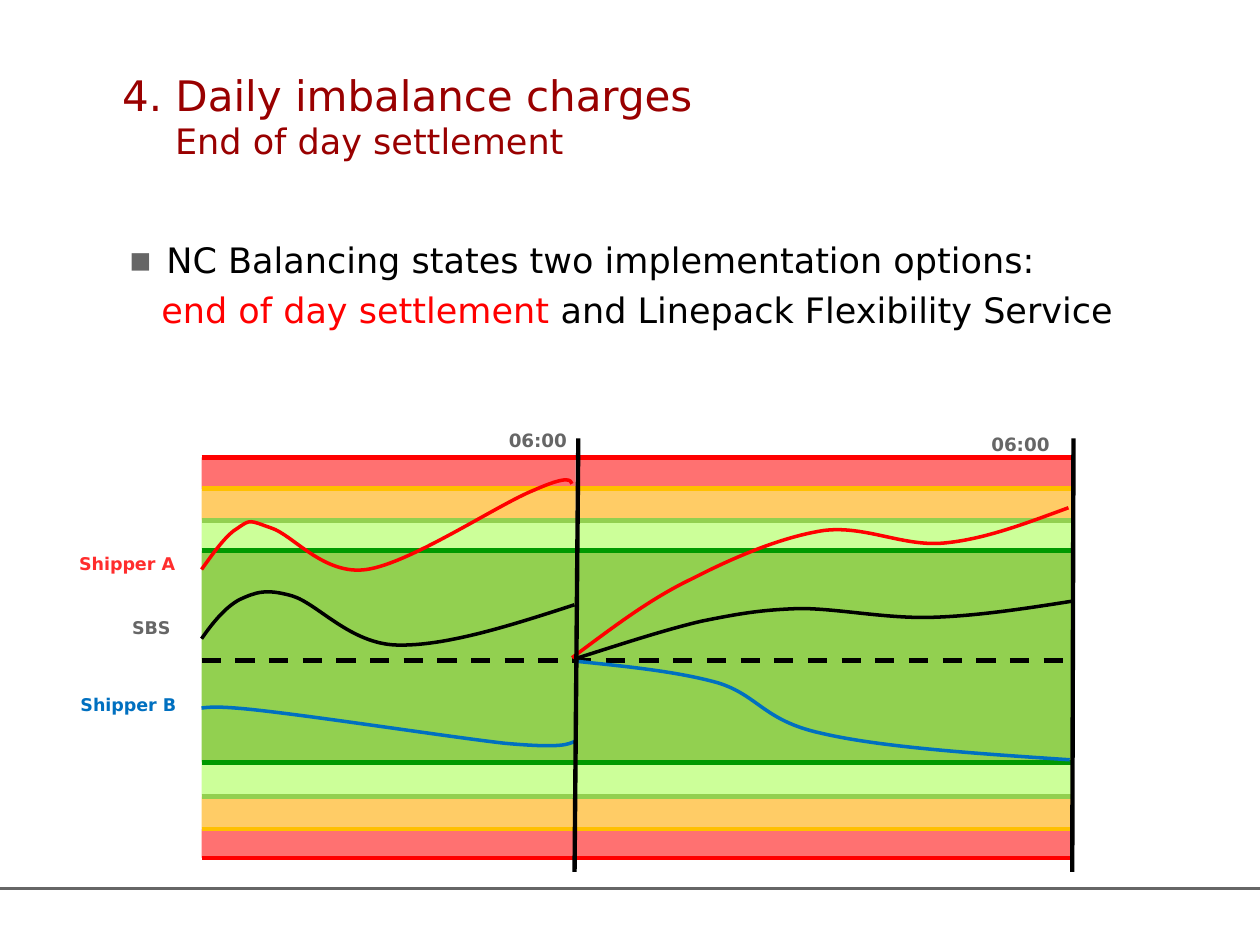
from dataclasses import dataclass
from itertools import pairwise

from lxml.etree import SubElement
from pptx import Presentation
from pptx.dml.color import RGBColor
from pptx.enum.dml import MSO_LINE
from pptx.enum.shapes import MSO_CONNECTOR, MSO_SHAPE
from pptx.enum.text import MSO_ANCHOR
from pptx.oxml.ns import qn
from pptx.util import Inches, Pt


@dataclass(frozen=True)
class Theme:
    font: str = "DejaVu Sans"
    heading: str = "990000"
    black: str = "000000"
    gray: str = "666666"
    red: str = "FF0000"
    blue: str = "0070C0"
    shipper_red: str = "FF2D2D"
    dark_green: str = "009900"
    green: str = "92D050"
    light_green: str = "CCFF99"
    amber: str = "FFC000"
    light_amber: str = "FFCC66"
    light_red: str = "FF7171"
    title_size: float = 24
    body_size: float = 20
    time_size: float = 10.5
    label_size: float = 10
    thin: float = 2
    axis: float = 2.5
    thick: float = 2.75


class SlideBuilder:
    columns = 100
    rows = 75

    def __init__(self, presentation, theme):
        self.theme = theme
        self.width = presentation.slide_width
        self.height = presentation.slide_height
        self.slide = presentation.slides.add_slide(presentation.slide_layouts[6])

    def x(self, columns):
        return round(self.width * columns / self.columns)

    def y(self, rows):
        return round(self.height * rows / self.rows)

    def point(self, position):
        return self.x(position[0]), self.y(position[1])

    def box(self, left, top, width, height):
        return self.x(left), self.y(top), self.x(width), self.y(height)

    def style_line(self, line, color, weight):
        line.color.rgb = RGBColor.from_string(color)
        line.width = Pt(weight)

    def text(self, area, paragraphs, margin=None, anchor=MSO_ANCHOR.TOP):
        text_frame = self.slide.shapes.add_textbox(*self.box(*area)).text_frame
        text_frame.word_wrap = True
        text_frame.vertical_anchor = anchor
        if margin is not None:
            text_frame.margin_left = text_frame.margin_right = margin
            text_frame.margin_top = text_frame.margin_bottom = margin
        for number, runs in enumerate(paragraphs):
            paragraph = text_frame.add_paragraph() if number else text_frame.paragraphs[0]
            for content, size, color, bold in runs:
                run = paragraph.add_run()
                run.text = content
                run.font.name = self.theme.font
                run.font.size = Pt(size)
                run.font.bold = bold
                run.font.color.rgb = RGBColor.from_string(color)
        return text_frame.paragraphs

    def label(self, area, content, size, color):
        self.text(area, [[(content, size, color, True)]])

    def indent(self, paragraph, left, first=0, bullet=None):
        properties = paragraph._p.get_or_add_pPr()
        properties.set("marL", str(self.x(left)))
        properties.set("indent", str(self.x(first)))
        if bullet:
            bullet_color = SubElement(properties, qn("a:buClr"))
            SubElement(bullet_color, qn("a:srgbClr"), val=self.theme.gray)
            SubElement(properties, qn("a:buFont"), typeface=self.theme.font)
            SubElement(properties, qn("a:buChar"), char=bullet)

    def band(self, left, top, right, bottom, color):
        area = self.box(left, top, right - left, bottom - top)
        shape = self.slide.shapes.add_shape(MSO_SHAPE.RECTANGLE, *area)
        shape.shadow.inherit = False
        shape.fill.solid()
        shape.fill.fore_color.rgb = RGBColor.from_string(color)
        shape.line.fill.background()

    def line(self, start, end, color, weight, dash=None):
        connector = self.slide.shapes.add_connector(
            MSO_CONNECTOR.STRAIGHT, *self.point(start), *self.point(end)
        )
        self.style_line(connector.line, color, weight)
        if dash:
            connector.line.dash_style = dash
        SubElement(connector._element.spPr, qn("a:effectLst"))

    def curve(self, points, color):
        start, *others = map(self.point, points)
        builder = self.slide.shapes.build_freeform(*start)
        builder.add_line_segments(others, close=False)
        shape = builder.convert_to_shape()
        shape.shadow.inherit = False
        shape.fill.background()
        self.style_line(shape.line, color, self.theme.thin)
        outline = shape._element.find(".//" + qn("a:path"))
        segments = outline.findall(qn("a:lnTo"))
        for first in range(0, len(segments), 3):
            bezier = SubElement(outline, qn("a:cubicBezTo"))
            for segment in segments[first:first + 3]:
                bezier.append(segment[0])
                outline.remove(segment)


def main():
    presentation = Presentation()
    presentation.slide_width, presentation.slide_height = Inches(10), Inches(7.5)
    theme = Theme()
    page = SlideBuilder(presentation, theme)

    page.line((0, 70.5), (100, 70.5), theme.gray, theme.thin)
    title = page.text((9.7, 4.3, 88.3, 9.7), [
        [("4. Daily imbalance charges", theme.title_size, theme.heading, False)],
        [("End of day settlement", theme.body_size, theme.heading, False)],
    ], margin=0, anchor=MSO_ANCHOR.MIDDLE)
    page.indent(title[1], 4.2)

    body = page.text((10.2, 18.9, 86.1, 47.3), [
        [("NC Balancing states two implementation options:", theme.body_size, theme.black, False)],
        [("end of day settlement ", theme.body_size, theme.red, False),
         ("and Linepack Flexibility Service", theme.body_size, theme.black, False)],
    ], margin=0)
    page.indent(body[0], 3, -3, "▪")
    page.indent(body[1], 2.6)
    body[1].space_before = Pt(4.7)

    days = list(pairwise((16, 45.7, 85.1)))
    levels = (36.3, 38.8, 41.3, 43.7, 60.5, 63.2, 65.8, 68.1)
    outer_fills = (theme.light_red, theme.light_amber, theme.light_green)
    fills = (*outer_fills, theme.green, *reversed(outer_fills))
    outer_limits = (theme.red, theme.amber, theme.green, theme.dark_green)
    limits = (*outer_limits, *reversed(outer_limits))
    for left, right in days:
        for (top, bottom), fill in zip(pairwise(levels), fills):
            page.band(left, top, right, bottom, fill)
        for level, limit in zip(levels, limits):
            page.line((left, level), (right, level), limit, theme.thick)
    page.line((16, 52.4), (85.1, 52.4), theme.black, theme.thick, MSO_LINE.DASH)

    curves = (
        (theme.red, [(16, 45.2), (17, 43.8), (18, 42.4), (18.9, 41.9),
                     (19.9, 41.2), (19.8, 41.3), (21.5, 41.9),
                     (23.2, 42.4), (25.7, 45.7), (29.1, 45.2),
                     (32.6, 44.7), (39.6, 40), (42.4, 38.9),
                     (45.1, 37.7), (45.3, 38.1), (45.4, 38.4)]),
        (theme.black, [(16, 50.7), (16.9, 49.4), (17.9, 48.2), (19, 47.6),
                       (20.3, 47), (21.1, 46.7), (23.2, 47.3),
                       (25.2, 47.9), (27.8, 51.1), (31.5, 51.2),
                       (35.3, 51.3), (40.4, 49.7), (45.6, 48)]),
        (theme.blue, [(16, 56.2), (16.7, 56.1), (17.5, 56.1), (18.7, 56.2),
                      (22.8, 56.5), (35.6, 58.5), (40.1, 59),
                      (44.6, 59.4), (45.1, 59.1), (45.7, 58.8)]),
        (theme.red, [(45.4, 52.2), (48.5, 49.9), (51.6, 47.5), (55, 45.9),
                     (58.3, 44.2), (62.1, 42.6), (65.4, 42.1),
                     (68.7, 41.7), (71.7, 43.4), (74.9, 43.1),
                     (78.2, 42.8), (81.5, 41.5), (84.8, 40.3)]),
        (theme.blue, [(45.9, 52.5), (49.8, 52.9), (53.8, 53.3), (57, 54.2),
                      (60.2, 55.2), (60.6, 57.2), (65.2, 58.2),
                      (69.9, 59.3), (77.4, 59.8), (84.9, 60.3)]),
        (theme.black, [(45.6, 52.3), (49.1, 51.2), (52.7, 50), (55.7, 49.3),
                       (58.7, 48.7), (60.4, 48.4), (63.5, 48.3),
                       (66.5, 48.3), (70.3, 49.1), (73.9, 49),
                       (77.5, 48.9), (81.4, 48.3), (85.2, 47.7)]),
    )
    for color, points in curves:
        page.curve(points, color)

    for top, bottom in ((45.9, 45.6), (85.2, 85.1)):
        page.line((top, 34.8), (bottom, 69.2), theme.black, theme.axis)
    for area in ((39.4, 33.6, 11.4, 2.5), (77.7, 33.9, 10.4, 2.5)):
        page.label(area, "06:00", theme.time_size, theme.gray)

    labels = (
        ("Shipper A", (5.3, 43.4, 10.6, 2.7), theme.shipper_red),
        ("SBS", (9.5, 48.5, 5.1, 2.7), theme.gray),
        ("Shipper B", (5.4, 54.6, 10.1, 2.7), theme.blue),
    )
    for content, area, color in labels:
        page.label(area, content, theme.label_size, color)

    presentation.save("out.pptx")


if __name__ == "__main__":
    main()
